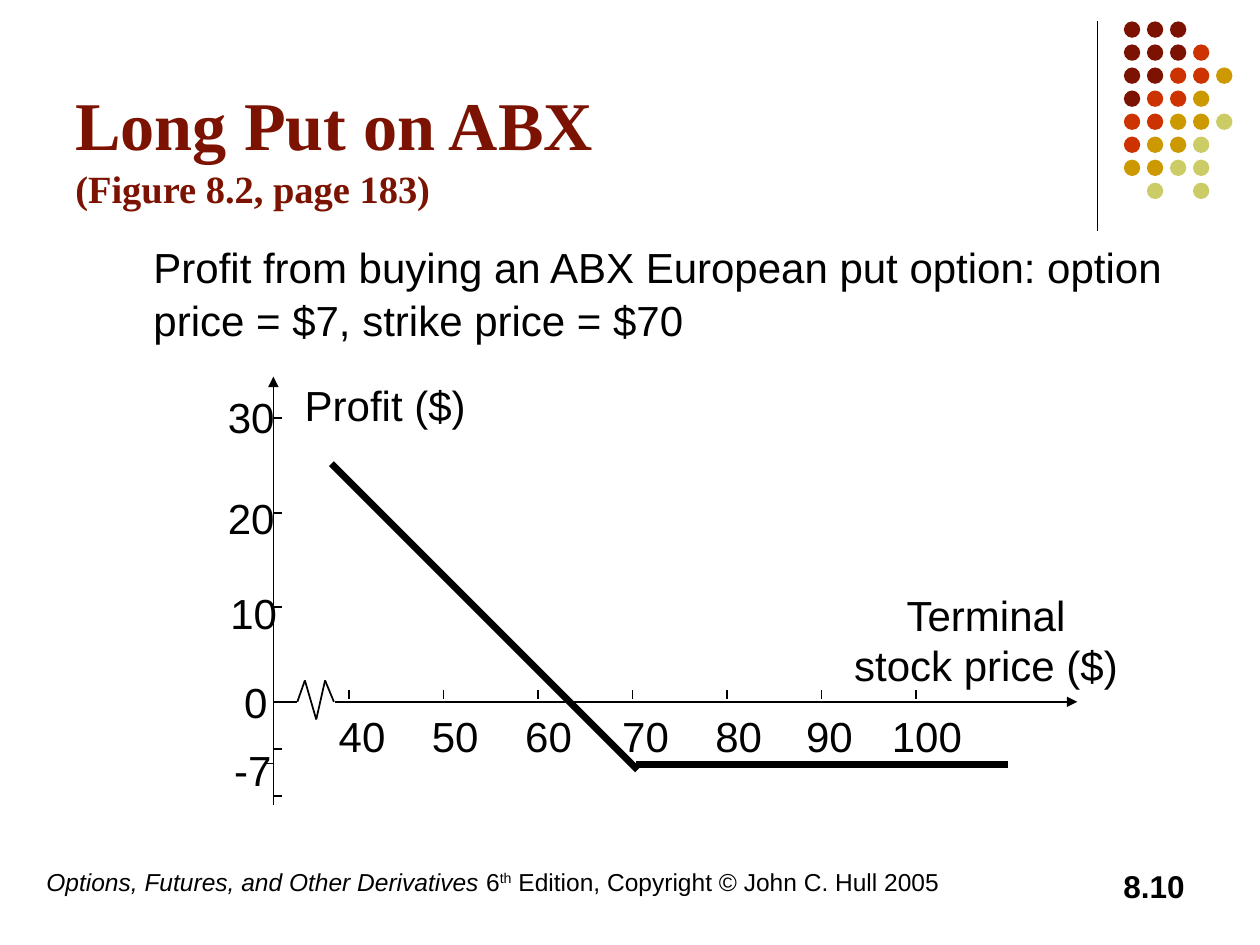
from lxml import etree
from pptx import Presentation
from pptx.dml.color import RGBColor
from pptx.enum.shapes import MSO_CONNECTOR, MSO_SHAPE
from pptx.enum.text import MSO_ANCHOR, PP_ALIGN
from pptx.oxml.ns import qn
from pptx.util import Inches, Pt

BLACK = RGBColor(0x00, 0x00, 0x00)
MAROON = RGBColor(0x7C, 0x13, 0x02)
RED = RGBColor(0xCC, 0x33, 0x00)
GOLD = RGBColor(0xCC, 0x99, 0x00)
OLIVE = RGBColor(0xCC, 0xCC, 0x66)


class SlideBuilder:
    body_font = "Arial"
    title_font = "Times New Roman"
    body_size = 24

    def __init__(self, page):
        self.page = page

    def line(self, start, end, weight=1, arrow=False):
        points = [Inches(value) for value in (*start, *end)]
        connector = self.page.shapes.add_connector(MSO_CONNECTOR.STRAIGHT, *points)
        connector.line.color.rgb = BLACK
        connector.line.width = Pt(weight)
        properties = connector._element.spPr
        if arrow:
            outline = properties.find(qn("a:ln"))
            etree.SubElement(outline, qn("a:tailEnd"), type="triangle")
        etree.SubElement(properties, qn("a:effectLst"))

    def dot(self, left, top, size, color):
        shape = self.page.shapes.add_shape(
            MSO_SHAPE.OVAL, Inches(left), Inches(top), Inches(size), Inches(size))
        shape.shadow.inherit = False
        shape.fill.solid()
        shape.fill.fore_color.rgb = color
        shape.line.fill.background()

    def text(self, left, top, width, height, content, size=None, font=None,
             color=BLACK, bold=False, align=PP_ALIGN.LEFT, wrap=True):
        """Add a text box and return its frame; a newline starts a paragraph."""
        box = self.page.shapes.add_textbox(
            Inches(left), Inches(top), Inches(width), Inches(height))
        frame = box.text_frame
        frame.text = content
        frame.word_wrap = wrap
        for para in frame.paragraphs:
            para.alignment = align
            for span in para.runs:
                span.font.name = font or self.body_font
                span.font.size = Pt(size or self.body_size)
                span.font.color.rgb = color
                span.font.bold = bold
        return frame

    def label(self, left, top, content):
        width = 0.2 + 0.185 * len(content)
        self.text(left, top, width, 0.5, content, wrap=False)

    def footer(self, left, top, width, height, parts):
        frame = self.text(left, top, width, height, parts[0], size=14)
        para = frame.paragraphs[0]
        para.runs[0].font.italic = True
        for content in parts[1:]:
            span = para.add_run()
            span.text = content
            span.font.name = self.body_font
            span.font.size = Pt(14)
            span.font.color.rgb = BLACK
        para.runs[2].font._element.set("baseline", "30000")


def add_corner_dots(builder):
    colors = {"M": MAROON, "R": RED, "G": GOLD, "O": OLIVE}
    rows = ["MMM", "MMMR", "MMRRG", "MRRG", "RRGGO", "RGGO", "GGOO", ".O.O"]
    pitch = 1.28 / 7
    builder.line((8.71, 0.17), (8.71, 1.83), 0.75)
    for row, pattern in enumerate(rows):
        for column, key in enumerate(pattern):
            if key in colors:
                builder.dot(8.92 + column * pitch, 0.17 + row * pitch, 0.13, colors[key])


def add_headings(builder):
    title = builder.text(0.5, 0.33, 8.83, 1.67,
                         "Long Put on ABX \v(Figure 8.2, page 183)", size=39,
                         font=builder.title_font, color=MAROON, bold=True)
    title.vertical_anchor = MSO_ANCHOR.MIDDLE
    title.paragraphs[0].runs[1].font.size = Pt(22)

    summary = builder.text(1.12, 1.85, 8.53, 1,
                           "Profit from buying an ABX European put option: "
                           "option price = $7, strike price = $70")
    summary.paragraphs[0].line_spacing = Pt(30.3)


def add_payoff_diagram(builder):
    axis_x, axis_y, step = 2.17, 5.57, 0.75

    # Axes, with a break near the origin
    builder.line((axis_x, 6.39), (axis_x, 2.99), arrow=True)
    builder.line((2.66, axis_y), (8.55, axis_y), arrow=True)
    break_points = [(axis_x, axis_y), (2.36, axis_y), (2.42, 5.4),
                    (2.51, 5.71), (2.58, 5.4), (2.65, axis_y)]
    for start, end in zip(break_points, break_points[1:]):
        builder.line(start, end)

    # Ticks
    for index in range(7):
        x = 2.77 + index * step
        builder.line((x, 5.48), (x, 5.55))
    for index in (0, 1, 2, 3.5, 4):
        y = 3.32 + index * step
        builder.line((axis_x, y), (axis_x + 0.07, y))
    builder.line((axis_x, 6.06), (axis_x - 0.07, 6.06))

    # Axis values and names
    price_lefts = [2.59, 3.33, 4.07, 4.84, 5.58, 6.3, 6.98]
    for index, left in enumerate(price_lefts):
        builder.label(left, 5.59, str(40 + 10 * index))
    profits = [("30", 1.71, 3.06), ("20", 1.71, 3.86), ("10", 1.73, 4.61),
               ("0", 1.84, 5.32), ("-7", 1.76, 5.86)]
    for content, left, top in profits:
        builder.label(left, top, content)
    builder.text(2.32, 2.96, 1.48, 0.5, "Profit ($)", wrap=False)
    builder.text(6.68, 4.63, 2.29, 0.9, "Terminal\nstock price ($)",
                 align=PP_ALIGN.CENTER, wrap=False)

    # Payoff
    builder.line((5.05, 6.07), (8, 6.07), 4)
    builder.line((5.06, 6.11), (2.63, 3.68), 4)


def main():
    deck = Presentation()
    deck.slide_width, deck.slide_height = Inches(10), Inches(7.5)
    builder = SlideBuilder(deck.slides.add_slide(deck.slide_layouts[6]))

    add_corner_dots(builder)
    builder.footer(0.27, 6.83, 8.27, 0.5,
                   ["Options, Futures, and Other Derivatives", " 6", "th",
                    " Edition, Copyright © John C. Hull 2005"])
    builder.text(7.17, 6.83, 2.33, 0.5, "8.10", size=18, bold=True,
                 align=PP_ALIGN.RIGHT)
    add_headings(builder)
    add_payoff_diagram(builder)
    deck.save("out.pptx")


if __name__ == "__main__":
    main()
